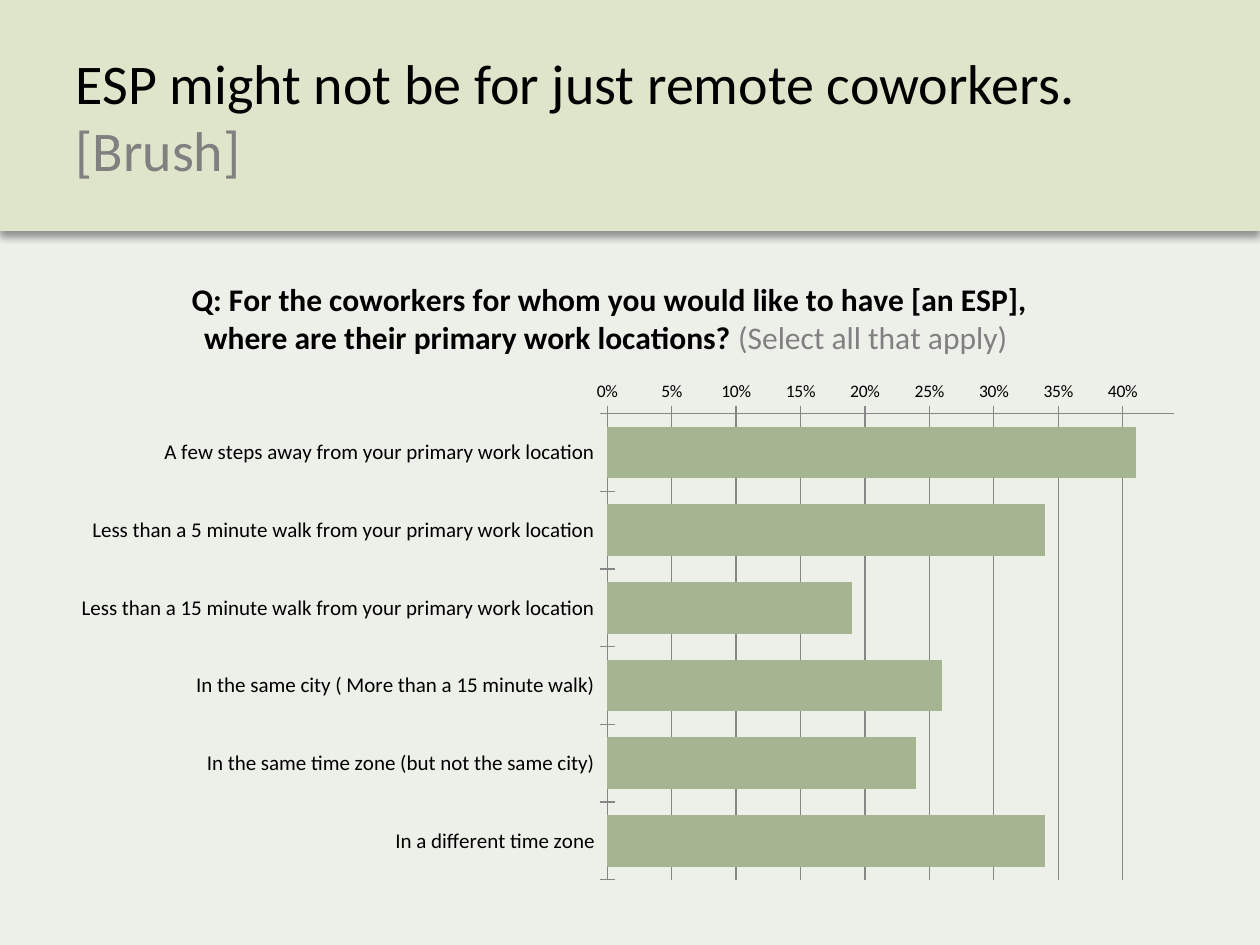
from lxml import etree
from pptx import Presentation
from pptx.chart.data import CategoryChartData
from pptx.dml.color import RGBColor
from pptx.enum import chart as charts, text
from pptx.oxml import parse_xml
from pptx.oxml.ns import nsdecls, qn
from pptx.util import Pt

COLORS = {
    "background": "EDF0E9",
    "banner": "DFE5CA",
    "bar": "A5B592",
    "line": "868686",
    "text": "000000",
    "muted": "808080",
}
LOCATIONS = {
    "A few steps away from your primary work location": 0.41,
    "Less than a 5 minute walk from your primary work location": 0.34,
    "Less than a 15 minute walk from your primary work location": 0.19,
    "In the same city ( More than a 15 minute walk)": 0.26,
    "In the same time zone (but not the same city)": 0.24,
    "In a different time zone": 0.34,
}


class SlideBuilder:
    font = "Calibri"

    def __init__(self, presentation):
        self.slide = presentation.slides.add_slide(presentation.slide_layouts[5])
        self.fill(self.slide.background.fill, "background")

    def color(self, name):
        return RGBColor.from_string(COLORS[name])

    def fill(self, fill, name):
        fill.solid()
        fill.fore_color.rgb = self.color(name)

    def style(self, font, size, color="text", bold=False):
        font.name, font.size, font.bold = self.font, Pt(size), bold
        font.color.rgb = self.color(color)

    def add_runs(self, paragraph, runs, size):
        for content, color, bold in runs:
            run = paragraph.add_run()
            run.text = content
            self.style(run.font, size, color, bold)

    def title(self, runs, left, top, width, height):
        shape = self.slide.shapes.title
        shape.left, shape.top = Pt(left), Pt(top)
        shape.width, shape.height = Pt(width), Pt(height)
        self.fill(shape.fill, "banner")
        shape.line.fill.background()
        frame = shape.text_frame
        frame.word_wrap = True
        frame.auto_size = text.MSO_AUTO_SIZE.NONE
        frame.vertical_anchor = text.MSO_ANCHOR.MIDDLE
        frame.margin_left = frame.margin_right = Pt(43.2)
        frame.margin_top = frame.margin_bottom = Pt(7.2)
        paragraph = frame.paragraphs[0]
        paragraph.alignment = text.PP_ALIGN.LEFT
        self.add_runs(paragraph, runs, 32)
        self.drop_shadow(shape)

    def drop_shadow(self, shape):
        shape._element.spPr.append(parse_xml(
            f'<a:effectLst {nsdecls("a")}>'
            f'<a:outerShdw blurRad="{Pt(4)}" dist="{Pt(3)}" dir="5400000" rotWithShape="0">'
            f'<a:srgbClr val="{COLORS["text"]}"><a:alpha val="40000"/></a:srgbClr>'
            '</a:outerShdw></a:effectLst>'))

    def layout(self, parent, position, **values):
        """Place a chart part by fractions of the chart's size."""
        for old in parent.findall(qn("c:layout")):
            parent.remove(old)
        layout = etree.Element(qn("c:layout"))
        manual = etree.SubElement(layout, qn("c:manualLayout"))
        for name, value in values.items():
            etree.SubElement(manual, qn(f"c:{name}")).set("val", str(value))
        parent.insert(position, layout)

    def axis(self, axis, size):
        self.style(axis.tick_labels.font, size)
        axis.major_tick_mark = charts.XL_TICK_MARK.CROSS
        axis.minor_tick_mark = charts.XL_TICK_MARK.NONE
        self.line(axis.format.line)

    def line(self, line):
        line.color.rgb = self.color("line")
        line.width = Pt(0.75)

    def bar_chart(self, question, values, left, top, width, height):
        data = CategoryChartData(number_format="0%")
        data.categories = list(values)
        data.add_series("Series 1", list(values.values()))
        chart = self.slide.shapes.add_chart(
            charts.XL_CHART_TYPE.BAR_CLUSTERED,
            Pt(left), Pt(top), Pt(width), Pt(height), data).chart
        self.style(chart.font, 10)
        chart.has_legend = False

        # Question above the bars
        chart.has_title = True
        self.add_runs(chart.chart_title.text_frame.paragraphs[0], question, 18)
        chart.chart_title.include_in_layout = False
        self.layout(chart.chart_title._element, 1,
                    xMode="edge", yMode="edge", x=0.11, y=0.02)

        # Bars
        plot = chart.plots[0]
        plot.gap_width = 50
        plot.vary_by_categories = False
        self.fill(plot.series[0].format.fill, "bar")
        self.layout(chart._chartSpace.chart.plotArea, 0,
                    layoutTarget="inner", xMode="edge", yMode="edge",
                    x=0.48, y=0.24, w=0.5, h=0.74)

        # Axes: first category on top, percentages above it
        self.axis(chart.category_axis, 12)
        chart.category_axis.reverse_order = True
        scale = chart.value_axis
        self.axis(scale, 10)
        scale.minimum_scale, scale.maximum_scale, scale.major_unit = 0, 0.44, 0.05
        scale.tick_labels.number_format = "0%"
        scale.tick_labels.number_format_is_linked = False
        scale.has_major_gridlines = True
        self.line(scale.major_gridlines.format.line)


def main():
    presentation = Presentation()
    presentation.slide_width, presentation.slide_height = Pt(720), Pt(540)
    builder = SlideBuilder(presentation)

    # Title banner
    builder.title([("ESP might not be for just remote coworkers. ", "text", False),
                   ("[Brush]", "muted", False)], 0, 0, 720, 132)

    # Survey chart
    question = [("Q: For the coworkers for whom you would like to have [an ESP], "
                 "where are their primary work locations? ", "text", True),
                ("(Select all that apply) ", "muted", False)]
    builder.bar_chart(question, LOCATIONS, 36, 150, 648, 360)

    presentation.save("out.pptx")


if __name__ == "__main__":
    main()
